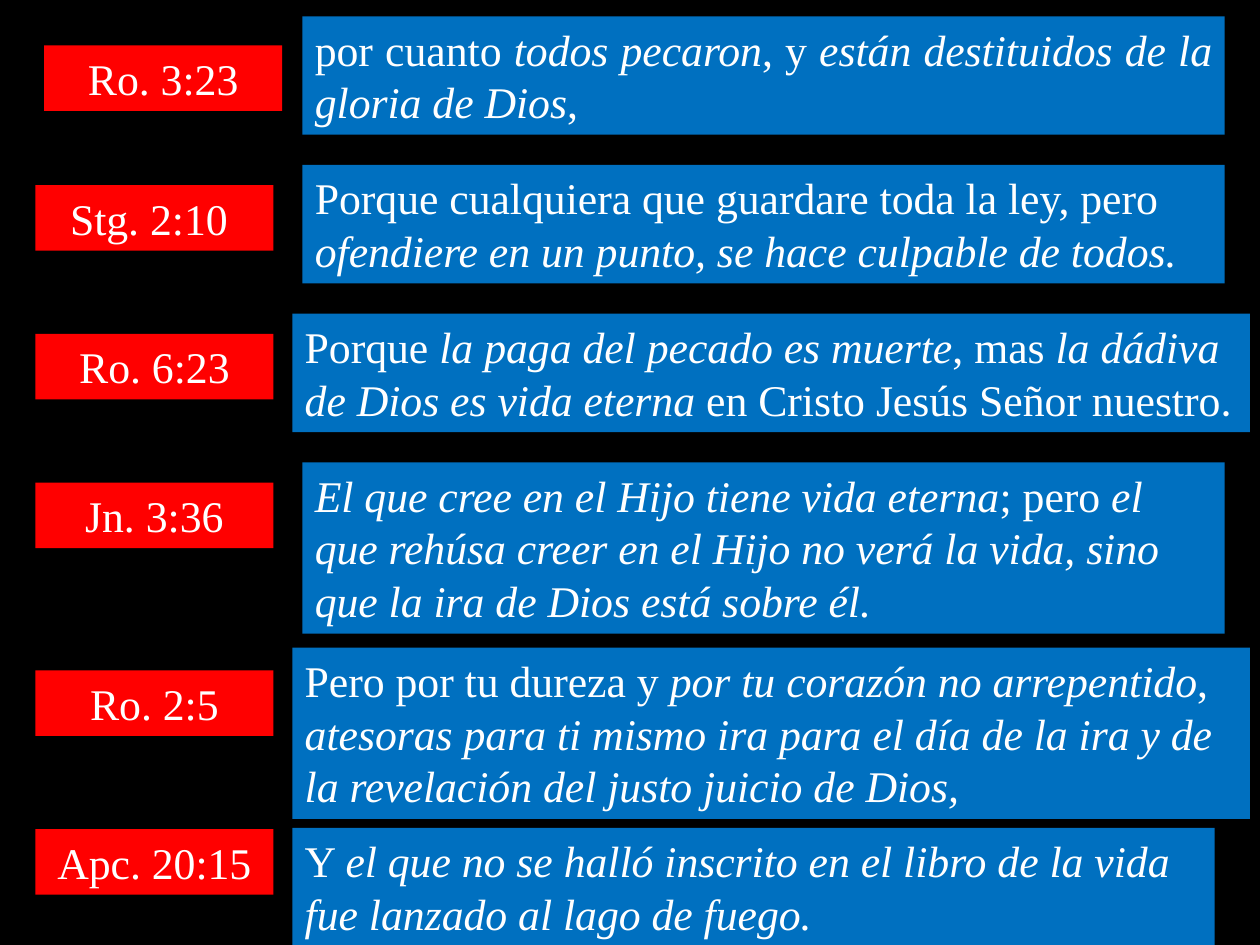
from dataclasses import dataclass

from pptx import Presentation
from pptx.dml.color import RGBColor
from pptx.enum.shapes import MSO_SHAPE
from pptx.enum.text import MSO_ANCHOR, MSO_AUTO_SIZE, PP_ALIGN
from pptx.util import Emu, Pt

SCALE = 9144  # EMU in one px, 100 px to the inch


@dataclass(frozen=True)
class Theme:
    back: RGBColor = RGBColor(0, 0, 0)
    label: RGBColor = RGBColor(0xFF, 0, 0)
    verse: RGBColor = RGBColor(0, 0x70, 0xC0)
    ink: RGBColor = RGBColor(0xFF, 0xFF, 0xFF)
    font: str = "Times New Roman"
    alt: str = "Calibri"
    size: int = 25


THEME = Theme()

LABEL_W, LABEL_H = 189, 52
LEFT, INSET = 28, 240      # usual left edges of labels and verses
WIDE_LEFT = 232            # left edge of the verses set further out
WIDTH, WIDE = 732, 760
TWO, THREE = 94, 136       # heights of two and three lines

# Label, verse (italics between asterisks), verse box, label offset, format
ROWS = [
    ("Ro. 3:23",
     "por cuanto *todos pecaron*, y *están destituidos de la gloria de Dios*, ",
     (INSET, 13, WIDTH, TWO), (35, 23), {"align": PP_ALIGN.JUSTIFY}),
    ("Stg. 2:10 ",
     "Porque cualquiera que guardare toda la ley, pero "
     "*ofendiere en un punto, se hace culpable de todos.*",
     (INSET, 131, WIDTH, TWO), (LEFT, 16), {}),
    ("Ro. 6:23",
     "Porque *la paga del pecado es muerte*, mas "
     "*la dádiva de Dios es vida eterna *en Cristo Jesús Señor nuestro",
     (WIDE_LEFT, 249, WIDE, TWO), (LEFT, 16), {"tail": "."}),
    ("Jn. 3:36",
     "*El que cree en el Hijo tiene vida eterna*; pero *el que rehúsa creer "
     "en el Hijo no verá la vida, sino que la ira de Dios está sobre él.*",
     (INSET, 367, WIDTH, THREE), (LEFT, 16), {}),
    ("Ro. 2:5",
     "Pero por tu dureza y *por tu corazón no arrepentido*, *atesoras para ti "
     "mismo ira para el día de la ira y de la revelación del justo juicio "
     "de Dios,*",
     (WIDE_LEFT, 514, WIDE, THREE), (LEFT, 18), {}),
    ("Apc. 20:15",
     "Y *el que no se halló inscrito en el libro de la vida "
     "fue lanzado al lago de fuego.*",
     (WIDE_LEFT, 657, WIDTH, TWO), (LEFT, 1), {}),
]


def px(n):
    return Emu(n * SCALE)


def write(shape, text, align=PP_ALIGN.LEFT, tail=""):
    """Set the text; asterisks switch italics, tail takes the second font."""
    frame = shape.text_frame
    frame.word_wrap = True
    frame.auto_size = MSO_AUTO_SIZE.SHAPE_TO_FIT_TEXT
    frame.vertical_anchor = MSO_ANCHOR.TOP
    para = frame.paragraphs[0]
    para.alignment = align
    parts = [(part, i % 2 == 1, THEME.font)
             for i, part in enumerate(text.split("*"))]
    parts.append((tail, False, THEME.alt))
    for part, slant, face in parts:
        if part:
            run = para.add_run()
            run.text = part
            run.font.name = face
            run.font.size = Pt(THEME.size)
            run.font.italic = slant
            run.font.color.rgb = THEME.ink


def panel(slide, box, fill, text, **form):
    shape = slide.shapes.add_shape(MSO_SHAPE.RECTANGLE, *map(px, box))
    shape.shadow.inherit = False
    shape.fill.solid()
    shape.fill.fore_color.rgb = fill
    shape.line.fill.background()
    write(shape, text, **form)


def row(slide, box, label, verse, offset, form):
    """One reference with its verse; the label hangs from the verse's top."""
    left, drop = offset
    spot = (left, box[1] + drop, LABEL_W, LABEL_H)
    panel(slide, spot, THEME.label, label, align=PP_ALIGN.CENTER)
    panel(slide, box, THEME.verse, verse, **form)


def main():
    deck = Presentation()
    deck.slide_width, deck.slide_height = px(1000), px(750)
    slide = deck.slides.add_slide(deck.slide_layouts[6])

    # Background
    slide.background.fill.solid()
    slide.background.fill.fore_color.rgb = THEME.back

    # Verses
    for label, verse, box, offset, form in ROWS:
        row(slide, box, label, verse, offset, form)

    deck.save("out.pptx")


if __name__ == "__main__":
    main()
